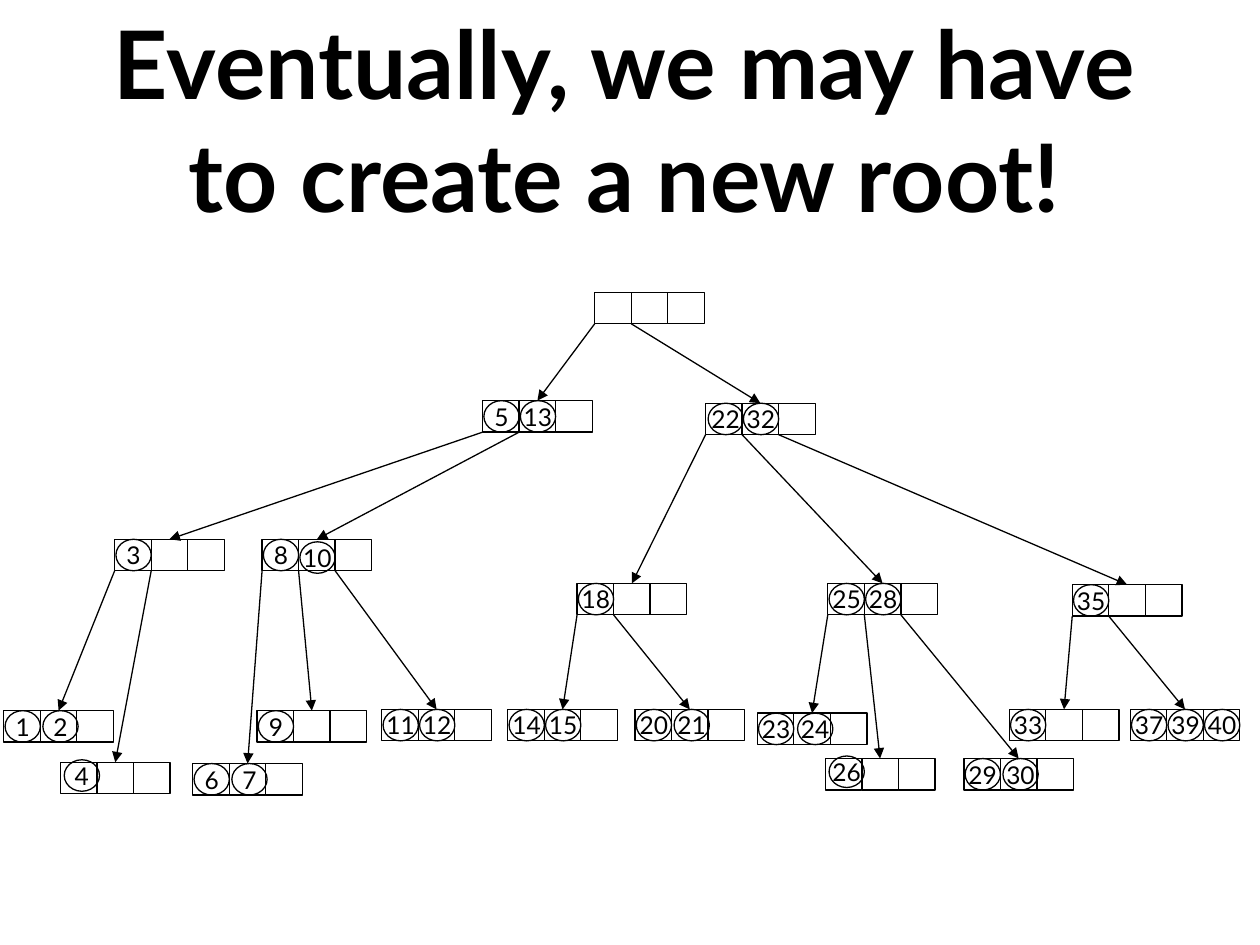
import pptx
import pptx.util
import pptx.dml.color
import pptx.enum.shapes
import pptx.enum.text
import lxml.etree

Inches = pptx.util.Inches
Pt = pptx.util.Pt
SHAPE = pptx.enum.shapes.MSO_SHAPE
BLACK = pptx.dml.color.RGBColor(0, 0, 0)
CELL_WIDTH = 0.29
CELL_HEIGHT = 0.25
KEY_WIDTH = 0.28


def write_text(shape, text, size, bold=False, wrap=False):
    frame = shape.text_frame
    frame.word_wrap = wrap
    frame.vertical_anchor = pptx.enum.text.MSO_ANCHOR.MIDDLE
    para = frame.paragraphs[0]
    para.alignment = pptx.enum.text.PP_ALIGN.CENTER
    span = para.add_run()
    span.text = text
    span.font.name = "Lato"
    span.font.size = Pt(size)
    span.font.bold = bold
    span.font.color.rgb = BLACK


def add_outline(shapes, kind, left, top, width):
    shape = shapes.add_shape(kind, Inches(left), Inches(top), Inches(width), Inches(CELL_HEIGHT))
    shape.shadow.inherit = False
    shape.fill.background()
    shape.line.color.rgb = BLACK
    shape.line.width = Pt(0.75)
    return shape


deck = pptx.Presentation()
deck.slide_width = Inches(10)
deck.slide_height = Inches(7.5)
page = deck.slides.add_slide(deck.slide_layouts[6])

title = page.shapes.add_textbox(Inches(0.42), Inches(0.53), Inches(9.07), Inches(0.82))
write_text(title, "Eventually, we may have to create a new root!", 54, bold=True, wrap=True)

nodes = {
    "root": (4.72, 2.32, []),
    "5": (3.83, 3.18, ["5", "13"]),
    "22": (5.6, 3.2, ["22", "32"]),
    "3": (0.91, 4.28, ["3"]),
    "8": (2.08, 4.28, ["8", "10"]),
    "18": (4.58, 4.63, ["18"]),
    "25": (6.57, 4.63, ["25", "28"]),
    "35": (8.51, 4.64, ["35"]),
    "1": (0.03, 5.64, ["1", "2"]),
    "4": (0.48, 6.05, ["4"]),
    "6": (1.53, 6.06, ["6", "7"]),
    "9": (2.04, 5.64, ["9"]),
    "11": (3.03, 5.63, ["11", "12"]),
    "14": (4.03, 5.63, ["14", "15"]),
    "20": (5.04, 5.63, ["20", "21"]),
    "23": (6.01, 5.66, ["23", "24"]),
    "26": (6.55, 6.02, ["26"]),
    "29": (7.65, 6.02, ["29", "30"]),
    "33": (8.01, 5.63, ["33"]),
    "37": (8.97, 5.63, ["37", "39", "40"]),
}
key_shifts = {
    "4": (0.02, -0.02),
    "26": (0.02, -0.02),
    "10": (0, 0.02),
    "2": (0.01, 0),
    "7": (0.01, 0),
    "21": (0.01, 0),
    "24": (0.02, 0),
    "30": (0.01, 0),
    "22": (0.01, 0),
}
children = {
    "root": ["5", "22"],
    "5": ["3", "8"],
    "22": ["18", "25", "35"],
    "3": ["1", "4"],
    "8": ["6", "9", "11"],
    "18": ["14", "20"],
    "25": ["23", "26", "29"],
    "35": ["33", "37"],
}

middle_cells = {}
for name, (left, top, keys) in nodes.items():
    group = page.shapes.add_group_shape()
    cells = [
        add_outline(group.shapes, SHAPE.RECTANGLE, left + slot * CELL_WIDTH, top, CELL_WIDTH)
        for slot in range(3)
    ]
    middle_cells[name] = cells[1]
    for slot, key in enumerate(keys):
        shift_x, shift_y = key_shifts.get(key, (0, 0))
        key_left = left + 0.01 + slot * CELL_WIDTH + shift_x
        circle = add_outline(page.shapes, SHAPE.OVAL, key_left, top + shift_y, KEY_WIDTH)
        write_text(circle, key, 14)

for parent, names in children.items():
    left, top, keys = nodes[parent]
    for slot, child in enumerate(names):
        start_x = Inches(left + slot * CELL_WIDTH)
        start_y = Inches(top + CELL_HEIGHT)
        arrow = page.shapes.add_connector(
            pptx.enum.shapes.MSO_CONNECTOR.STRAIGHT, start_x, start_y, start_x, start_y
        )
        arrow.end_connect(middle_cells[child], 0)
        arrow.line.color.rgb = BLACK
        arrow.line.width = Pt(0.75)
        line = arrow.line._get_or_add_ln()
        lxml.etree.SubElement(line, pptx.oxml.ns.qn("a:tailEnd"), type="triangle")
        lxml.etree.SubElement(arrow._element.spPr, pptx.oxml.ns.qn("a:effectLst"))

deck.save("out.pptx")
